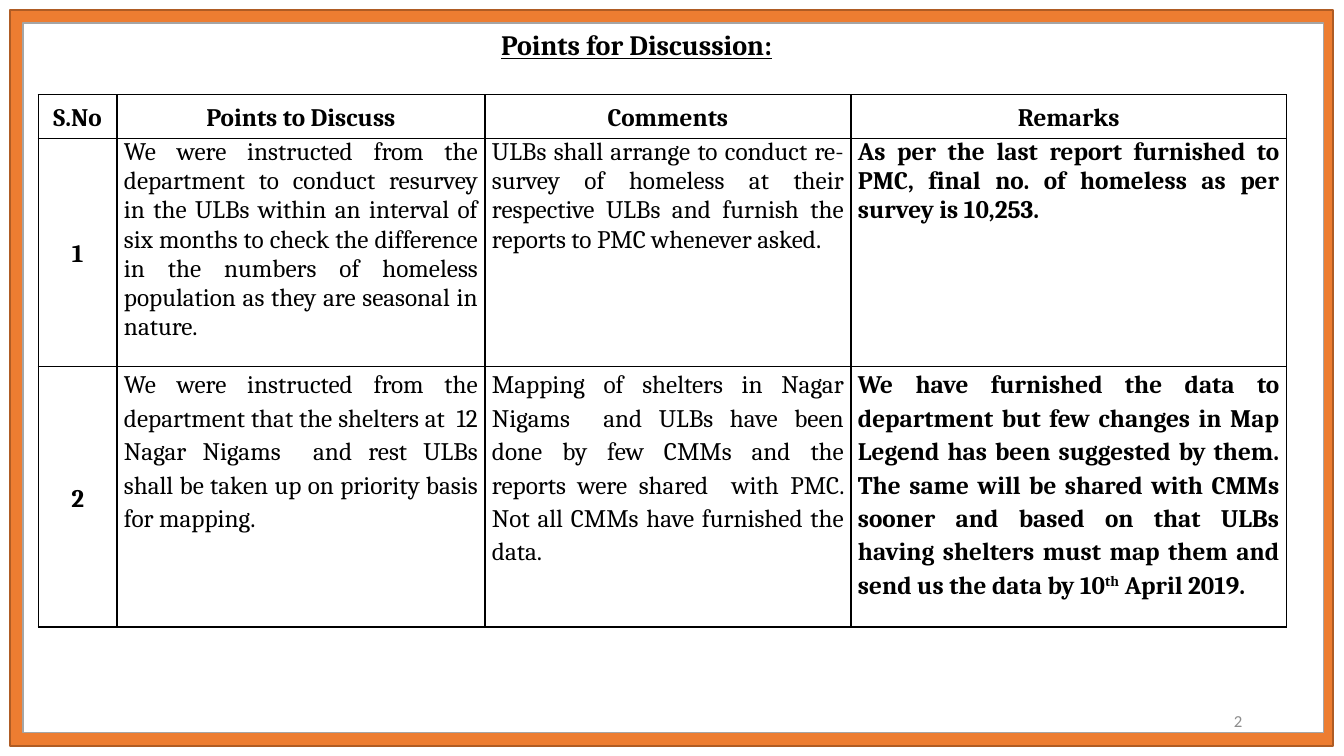
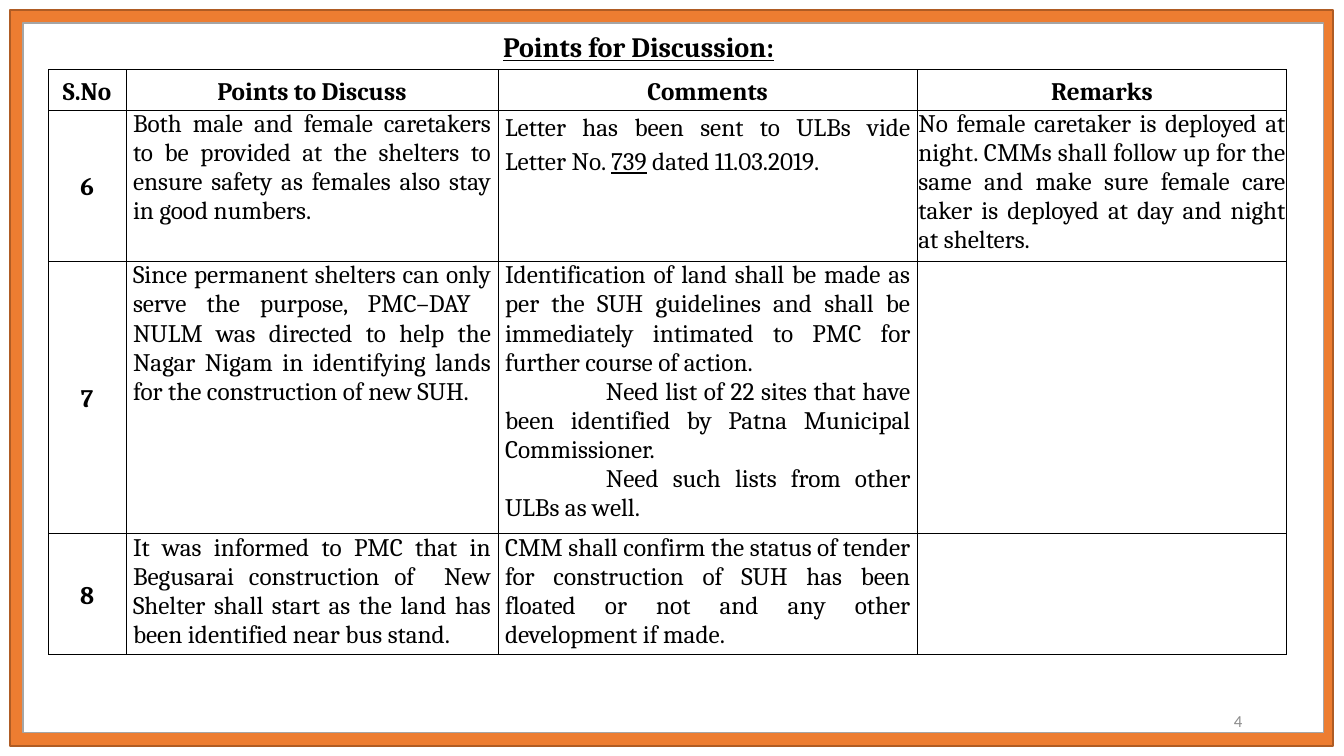
from dataclasses import dataclass

from lxml.etree import SubElement
from pptx import Presentation
from pptx.dml.color import RGBColor
from pptx.enum.shapes import MSO_SHAPE
from pptx.enum.text import MSO_ANCHOR, MSO_AUTO_SIZE, PP_ALIGN
from pptx.oxml.ns import qn
from pptx.util import Inches, Pt

COLORS = {"orange": "ED7D31", "brown": "AF5C24", "white": "FFFFFF",
          "silver": "A5A5A5", "gray": "8C8C8C", "black": "000000"}
FONT, NUMBER_FONT = "Cambria", "Calibri"
HEADERS = ["S.No", "Points to Discuss", "Comments", "Remarks"]


@dataclass
class Entry:
    """Content of one cell: a paragraph is a string or a list of (text, style)."""
    paras: list
    bold: bool = False
    spacing: float = 1.0
    after: float = 0
    inset: float = 0.07
    centered: bool = False


def rgb(name):
    return RGBColor.from_string(COLORS[name])


def add_run(p, text, size, font=FONT, color="black", bold=False, underline=False):
    r = p.add_run()
    r.text = text
    f = r.font
    f.name, f.size, f.bold, f.underline = font, Pt(size), bold, underline
    f.color.rgb = rgb(color)
    return r


# Frame shared by all slides, kept on the layout
def add_frame(layout, s):
    frames = [((0.1, 0.1, 13.12, 7.3), "orange", "brown"),
              ((0.23, 0.23, 12.9, 7.04), "white", "silver")]
    for i, (box, fill, line) in enumerate(frames):
        sp = s.shapes.add_shape(MSO_SHAPE.RECTANGLE, *map(Inches, box))
        sp.shadow.inherit = False
        sp.fill.solid()
        sp.fill.fore_color.rgb = rgb(fill)
        sp.line.color.rgb = rgb(line)
        sp.line.width = Pt(1)
        layout.shapes._spTree.insert(2 + i, sp._element)


def add_title(s, left, top):
    title = s.shapes.title
    title.left, title.top = Inches(left), Inches(top)
    title.width, title.height = Inches(11.77), Inches(0.24)
    tf = title.text_frame
    tf.auto_size = MSO_AUTO_SIZE.NONE
    tf.vertical_anchor = MSO_ANCHOR.MIDDLE
    p = tf.paragraphs[0]
    p.alignment, p.line_spacing = PP_ALIGN.CENTER, 0.9
    add_run(p, "Points for Discussion:", 20, bold=True, underline=True)


def add_number(s, number):
    sp = s.shapes.add_textbox(Inches(9.42), Inches(6.95), Inches(3), Inches(0.4))
    tf = sp.text_frame
    tf.word_wrap = True
    tf.vertical_anchor = MSO_ANCHOR.MIDDLE
    p = tf.paragraphs[0]
    p.alignment = PP_ALIGN.RIGHT
    add_run(p, str(number), 12, NUMBER_FONT, "gray")


# Table parts
def set_borders(cell, width):
    tcPr = cell._tc.get_or_add_tcPr()
    for i, side in enumerate(("lnL", "lnR", "lnT", "lnB")):
        ln = tcPr.makeelement(qn(f"a:{side}"), {"w": str(Pt(width))})
        fill = SubElement(ln, qn("a:solidFill"))
        SubElement(fill, qn("a:srgbClr"), val=COLORS["black"])
        tcPr.insert(i, ln)


def fill_cell(cell, entry, border):
    cell.fill.background()
    set_borders(cell, border)
    cell.margin_left = cell.margin_right = Inches(entry.inset)
    cell.margin_top = cell.margin_bottom = 0
    cell.vertical_anchor = MSO_ANCHOR.MIDDLE if entry.centered else MSO_ANCHOR.TOP
    tf = cell.text_frame
    for i, para in enumerate(entry.paras):
        p = tf.add_paragraph() if i else tf.paragraphs[0]
        p.alignment = PP_ALIGN.CENTER if entry.centered else PP_ALIGN.JUSTIFY
        p.line_spacing, p.space_after = entry.spacing, Pt(entry.after)
        if i:  # follow-up paragraphs start one inch in
            p._p.get_or_add_pPr().set("indent", str(Inches(1)))
        for text, style in [(para, "")] if isinstance(para, str) else para:
            r = add_run(p, text, 18, bold=entry.bold, underline=style == "underline")
            if style == "super":
                r._r.get_or_add_rPr().set("baseline", "30000")


def add_points(s, left, top, cols, heights, rows, border):
    frame = s.shapes.add_table(len(heights), len(cols), Inches(left), Inches(top),
                               Inches(sum(cols)), Inches(sum(heights)))
    table = frame.table
    table.first_row = table.horz_banding = False
    for col, width in zip(table.columns, cols):
        col.width = Inches(width)
    for row, height in zip(table.rows, heights):
        row.height = Inches(height)
    label = dict(bold=True, spacing=1.15, centered=True)
    grid = [[Entry([h], **label) for h in HEADERS]]
    grid += [[Entry([str(n)], **label), *entries] for n, *entries in rows]
    for row, entries in zip(table.rows, grid):
        for cell, entry in zip(row.cells, entries):
            fill_cell(cell, entry, border)


def add_discussion(prs, number, title_at, **table):
    s = prs.slides.add_slide(prs.slide_layouts[5])
    add_title(s, *title_at)
    add_number(s, number)
    add_points(s, **table)
    return s


SURVEY_ROWS = [
    (1,
     Entry(["We were instructed from the department to conduct resurvey in the ULBs "
            "within an interval of six months to check the difference in the numbers of "
            "homeless population as they are seasonal in nature."]),
     Entry(["ULBs shall arrange to conduct re-survey of homeless at their respective "
            "ULBs and furnish the reports to PMC whenever asked."]),
     Entry(["As per the last report furnished to PMC, final no. of homeless as per "
            "survey is 10,253."], bold=True)),
    (2,
     Entry(["We were instructed from the department that the shelters at  12 Nagar "
            "Nigams  and rest ULBs shall be taken up on priority basis for mapping."],
           spacing=1.15),
     Entry(["Mapping of shelters in Nagar Nigams  and ULBs have been done by few CMMs "
            "and the reports were shared  with PMC. Not all CMMs have furnished the "
            "data."], spacing=1.15),
     Entry([[("We have furnished the data to department but few changes in Map Legend "
              "has been suggested by them. The same will be shared with CMMs sooner and "
              "based on that ULBs having shelters must map them and send us the data by "
              "10", ""), ("th", "super"), (" April 2019.", "")]],
           bold=True, spacing=1.15)),
]
SHELTER_ROWS = [
    (6,
     Entry(["Both male and female caretakers to be provided at the shelters to ensure "
            "safety as females also stay in good numbers."]),
     Entry([[("Letter has been sent to ULBs vide Letter No. ", ""),
             ("739", "underline"), (" dated 11.03.2019.", "")]], spacing=1.15, after=10),
     Entry(["No female caretaker is deployed at night. CMMs shall follow up for the same "
            "and make sure female care taker is deployed at day and night at shelters."],
           inset=0.01)),
    (7,
     Entry(["Since permanent shelters can only serve the purpose, PMC–DAY  NULM was "
            "directed to help the Nagar Nigam in identifying lands for the construction "
            "of new SUH."]),
     Entry(["Identification of land shall be made as per the SUH guidelines and shall be "
            "immediately intimated to PMC for further course of action.",
            "Need list of 22 sites that have been identified by Patna Municipal "
            "Commissioner.",
            "Need such lists from other ULBs as well."]),
     Entry([])),
    (8,
     Entry(["It was informed to PMC that in Begusarai construction of  New Shelter shall "
            "start as the land has been identified near bus stand."]),
     Entry(["CMM shall confirm the status of tender for construction of SUH has been "
            "floated or not and any other development if made."]),
     Entry([])),
]


def main():
    prs = Presentation()
    prs.slide_width, prs.slide_height = Inches(13.33), Inches(7.5)
    s = add_discussion(prs, 2, (0.43, 0.34), left=0.38, top=0.94,
                       cols=[0.78, 3.65, 3.63, 4.32], heights=[0.43, 2.27, 2.58],
                       rows=SURVEY_ROWS, border=1)
    add_frame(s.slide_layout, s)
    add_discussion(prs, 4, (0.45, 0.36), left=0.48, top=0.69,
                   cols=[0.77, 3.69, 4.16, 3.66], heights=[0.4, 1.46, 2.6, 1.15],
                   rows=SHELTER_ROWS, border=0.5)
    prs.save("out.pptx")


if __name__ == "__main__":
    main()
